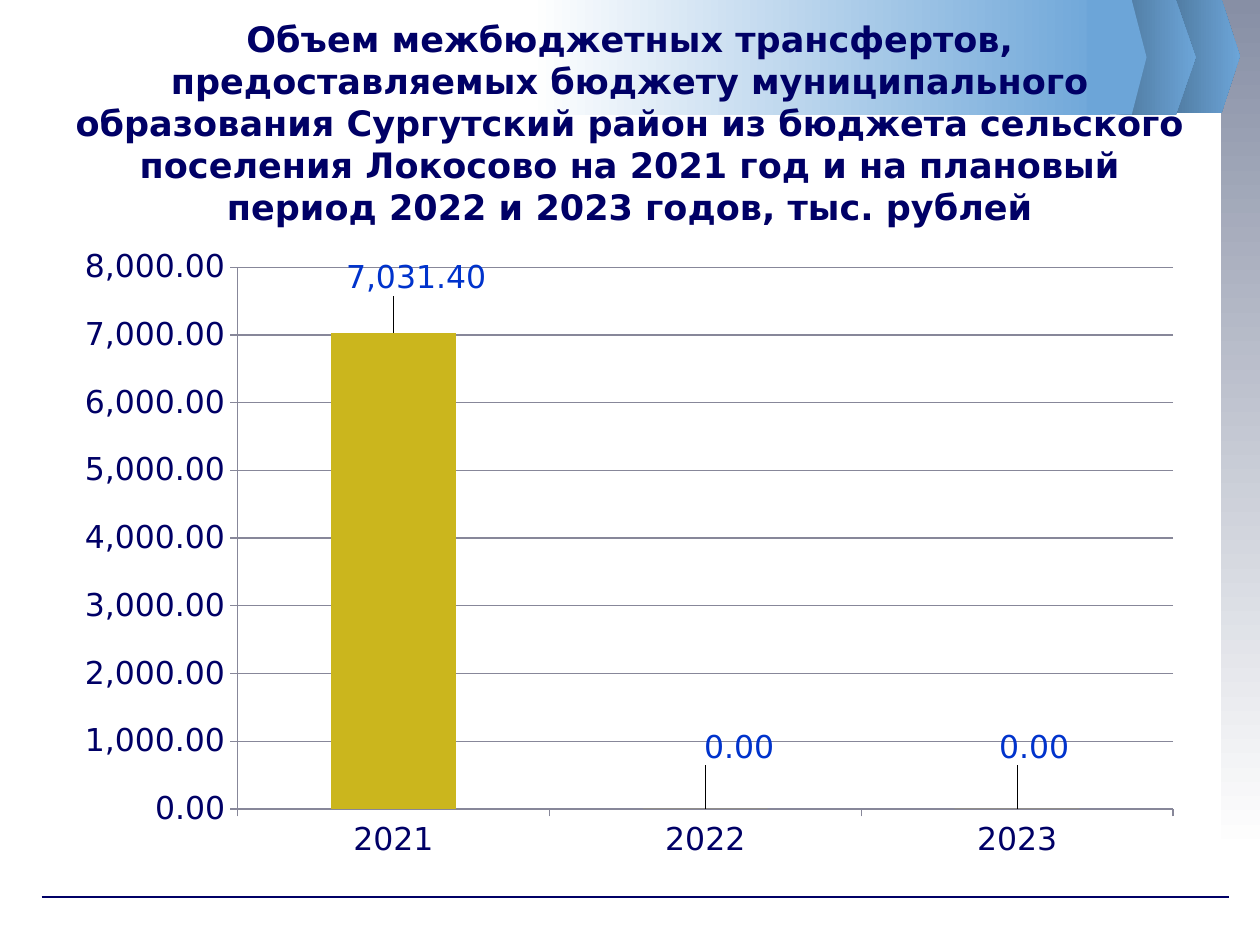
from pptx import Presentation
from pptx.chart.data import CategoryChartData
from pptx.dml.color import RGBColor
from pptx.enum.chart import XL_CHART_TYPE, XL_LABEL_POSITION as LabelPos, XL_TICK_MARK as Tick
from pptx.enum.shapes import MSO_CONNECTOR, MSO_SHAPE as Shape
from pptx.enum.text import MSO_ANCHOR, PP_ALIGN
from pptx.oxml import parse_xml
from pptx.oxml.ns import nsdecls
from pptx.util import Inches, Pt

COLORS = {
    "navy": "000066", "blue": "0033CC", "sky": "6CA5D8", "steel": "4D769B",
    "slate": "878FA5", "white": "FFFFFF", "gold": "CBB61D", "grid": "878799",
}
FONT = "DejaVu Sans"
NUMBER_FORMAT = "#,##0.00"
TITLE = ("Объем межбюджетных трансфертов, предоставляемых бюджету муниципального "
         "образования Сургутский район из бюджета сельского поселения Локосово "
         "на 2021 год и на плановый период 2022 и 2023 годов, тыс. рублей")
TRANSFERS = {"2021": 7031.4, "2022": 0, "2023": 0}
# Shift of each value label, as shares of the chart's width and height
LABEL_SHIFTS = [(0.02, -0.05), (0.03, -0.06), (0.015, -0.06)]


def rgb(name):
    return RGBColor.from_string(COLORS[name])


def style_font(font, **changes):
    values = {"name": FONT, "size": Pt(18), "bold": False, **changes}
    color = values.pop("color", "navy")
    for key, value in values.items():
        setattr(font, key, value)
    font.color.rgb = rgb(color)


def add_panel(slide, kind, box, colors, angle=0):
    """Add a borderless shape with one plain colour or a two-colour gradient."""
    panel = slide.shapes.add_shape(kind, *map(Inches, box))
    panel.shadow.inherit = False
    panel.line.fill.background()
    if kind == Shape.PENTAGON:
        panel.adjustments[0] = 0.25
    if len(colors) == 1:
        panel.fill.solid()
        panel.fill.fore_color.rgb = rgb(colors[0])
        return
    panel.fill.gradient()
    panel.fill.gradient_angle = angle
    for stop, color, position in zip(panel.fill.gradient_stops, colors, (0, 1)):
        stop.color.rgb = rgb(color)
        stop.position = position


def add_decor(slide):
    # Side strip, fading downwards
    add_panel(slide, Shape.RECTANGLE, (9.69, 0, 0.31, 6.77), ("slate", "white"), 270)

    # Footer rule
    rule = slide.shapes.add_connector(
        MSO_CONNECTOR.STRAIGHT, Inches(0.33), Inches(7.12), Inches(9.75), Inches(7.12))
    rule.line.color.rgb = rgb("navy")
    rule.line.width = Pt(0.75)
    rule._element.spPr.append(parse_xml(f"<a:effectLst {nsdecls('a')}/>"))

    # Banner with arrow tips, rightmost at the back
    for left, top, width in ((9.25, -0.01, 0.59), (8.86, 0, 0.63)):
        add_panel(slide, Shape.PENTAGON, (left, top, width, 0.91), ("steel", "sky"))
    add_panel(slide, Shape.RECTANGLE, (4.21, 0, 4.6, 0.91), ("white", "sky"))
    add_panel(slide, Shape.PENTAGON, (8.63, 0, 0.47, 0.91), ("sky",))


def add_title(slide, box):
    frame = slide.shapes.add_textbox(*map(Inches, box)).text_frame
    frame.word_wrap = True
    frame.vertical_anchor = MSO_ANCHOR.MIDDLE
    heading = frame.paragraphs[0]
    heading.alignment = PP_ALIGN.CENTER
    run = heading.add_run()
    run.text = TITLE
    style_font(run.font, size=Pt(20), bold=True)


def manual_layout(**values):
    parts = "".join(f'<c:{key} val="{value}"/>' for key, value in values.items())
    return parse_xml(f"<c:layout {nsdecls('c')}><c:manualLayout>{parts}"
                     "</c:manualLayout></c:layout>")


def add_transfer_chart(slide, box):
    data = CategoryChartData(number_format=NUMBER_FORMAT)
    data.categories = list(TRANSFERS)
    data.add_series("Series 1", list(TRANSFERS.values()))
    chart = slide.shapes.add_chart(
        XL_CHART_TYPE.COLUMN_CLUSTERED, *map(Inches, box), data).chart
    chart.has_legend = False
    chart.has_title = False
    style_font(chart.font)

    # Plot area
    plot_area = chart._chartSpace.chart.plotArea
    for old_layout in plot_area.findall("{*}layout"):
        plot_area.remove(old_layout)
    plot_area.insert(0, manual_layout(
        layoutTarget="inner", xMode="edge", yMode="edge",
        x=0.154, y=0.05, w=0.825, h=0.853))

    # Axes
    values_axis = chart.value_axis
    for key, value in {"minimum_scale": 0, "maximum_scale": 8000, "major_unit": 1000,
                       "has_major_gridlines": True}.items():
        setattr(values_axis, key, value)
    values_axis.tick_labels.number_format = NUMBER_FORMAT
    values_axis.tick_labels.number_format_is_linked = False
    for axis in (chart.category_axis, values_axis):
        axis.major_tick_mark = Tick.OUTSIDE
        axis.minor_tick_mark = Tick.NONE
        style_font(axis.tick_labels.font)
    for part in (chart.category_axis, values_axis, values_axis.major_gridlines):
        part.format.line.color.rgb = rgb("grid")
        part.format.line.width = Pt(0.75)

    # Columns and their value labels
    plot = chart.plots[0]
    plot.gap_width = 150
    plot.vary_by_categories = False
    series = plot.series[0]
    series.format.fill.solid()
    series.format.fill.fore_color.rgb = rgb("gold")
    labels = series.data_labels
    labels.show_value = True
    labels.number_format = NUMBER_FORMAT
    labels.number_format_is_linked = False
    style_font(labels.font, color="blue")
    for index, (x, y) in enumerate(LABEL_SHIFTS):
        label = series.points[index].data_label
        style_font(label.font, color="blue")
        label.position = LabelPos.OUTSIDE_END
        element = labels._element.findall("{*}dLbl")[index]
        element.insert(1, manual_layout(x=x, y=y))


def main():
    deck = Presentation()
    deck.slide_width, deck.slide_height = Inches(10), Inches(7.5)
    slide = deck.slides.add_slide(deck.slide_layouts[6])
    add_decor(slide)
    add_title(slide, (0.5, 0.23, 9, 1.48))
    add_transfer_chart(slide, (0.5, 1.87, 9, 5.04))
    deck.save("out.pptx")


if __name__ == "__main__":
    main()
